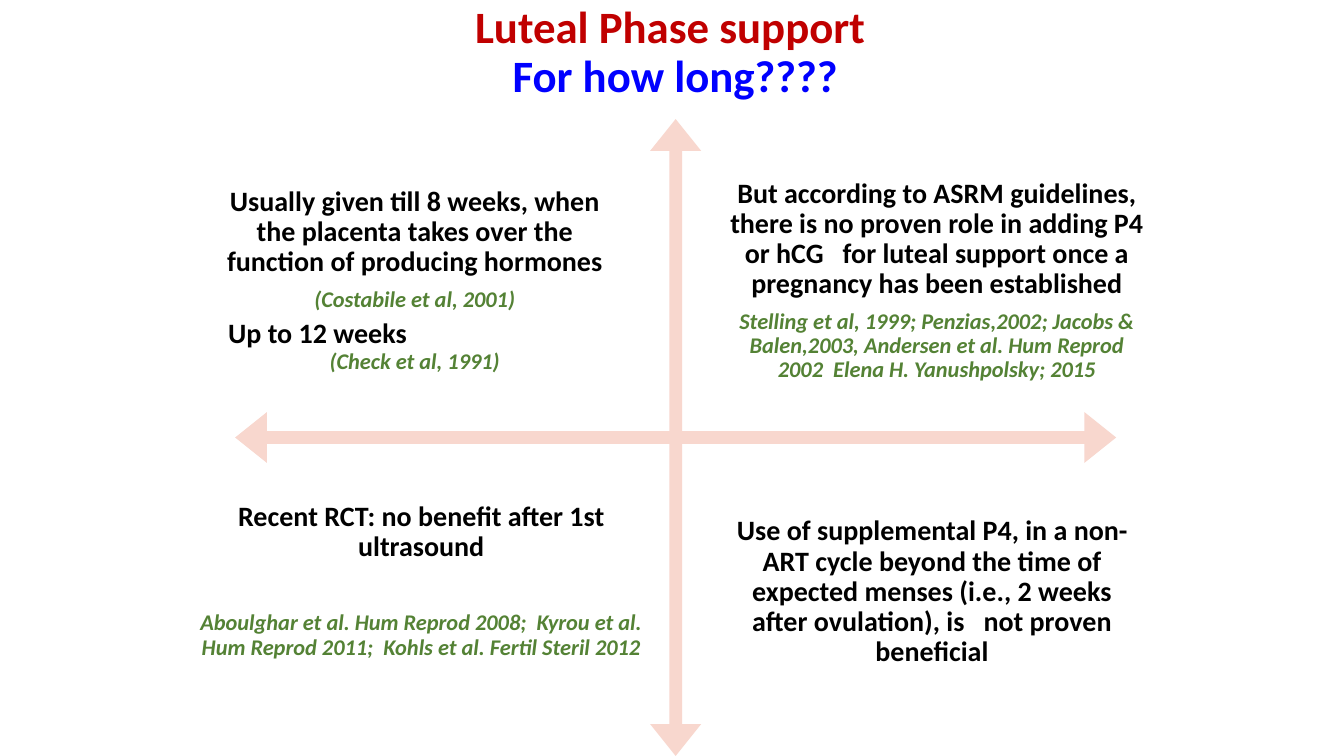
from dataclasses import dataclass
from pptx import Presentation
from pptx.dml.color import RGBColor
from pptx.enum.shapes import MSO_SHAPE as Shape
from pptx.enum.text import MSO_ANCHOR as Anchor, MSO_AUTO_SIZE as AutoSize, PP_ALIGN as Align
from pptx.util import Inches, Pt

RED = RGBColor(0xC0, 0x00, 0x00)
BLUE = RGBColor(0x00, 0x00, 0xFF)
PEACH = RGBColor(0xF8, 0xD7, 0xCE)
WHITE = RGBColor(0xFF, 0xFF, 0xFF)
BLACK = RGBColor(0x00, 0x00, 0x00)
GREEN = RGBColor(0x54, 0x82, 0x35)


@dataclass
class Line:
    text: str
    cite: bool = False
    left: bool = False
    before: float = 0
    after: float = 0


@dataclass
class Deck:
    prs: object
    s: object
    font: str = "Calibri"

    def box(self, x, y, w, h):
        width, height = self.prs.slide_width, self.prs.slide_height
        return (int(width * x / 100), int(height * y / 100),
                int(width * w / 100), int(height * h / 100))

    def style(self, p, size):
        p.alignment = Align.CENTER
        p.line_spacing = 0.9
        p.font.name = self.font
        p.font.size = Pt(size)
        p.font.bold = True

    def title(self, area, parts):
        sp = self.s.shapes.title
        sp.left, sp.top, sp.width, sp.height = self.box(*area)
        tf = sp.text_frame
        tf.auto_size = AutoSize.NONE
        tf.vertical_anchor = Anchor.TOP
        p = tf.paragraphs[0]
        self.style(p, 32)
        for i, (text, color) in enumerate(parts):
            if i:
                p.add_line_break()
            r = p.add_run()
            r.text = text
            r.font.color.rgb = color

    def shape(self, kind, area, fill):
        sp = self.s.shapes.add_shape(kind, *self.box(*area))
        sp.shadow.inherit = False
        sp.fill.solid()
        sp.fill.fore_color.rgb = fill
        sp.line.fill.background()
        return sp

    def arrows(self, area, adjustments):
        sp = self.shape(Shape.QUAD_ARROW, area, PEACH)
        for i, value in enumerate(adjustments):
            sp.adjustments[i] = value

    def card(self, area, lines, lift=0):
        tf = self.shape(Shape.ROUNDED_RECTANGLE, area, WHITE).text_frame
        tf.word_wrap = True
        tf.vertical_anchor = Anchor.MIDDLE
        tf.margin_left = tf.margin_right = tf.margin_top = Inches(0.08)
        tf.margin_bottom = Inches(0.08 + lift)
        for i, line in enumerate(lines):
            p = tf.add_paragraph() if i else tf.paragraphs[0]
            p.text = line.text
            self.style(p, 16 if line.cite else 20)
            p.font.italic = line.cite
            p.font.color.rgb = GREEN if line.cite else BLACK
            p.space_after = Pt(line.after)
            if line.before:
                p.space_before = Pt(line.before)
            if line.left:
                p.alignment = Align.LEFT
                p._p.get_or_add_pPr().set("marL", str(Inches(0.18)))


def main():
    prs = Presentation()
    prs.slide_width, prs.slide_height = Inches(13.33), Inches(7.5)
    deck = Deck(prs, prs.slides.add_slide(prs.slide_layouts[5]))
    deck.title((16.5, 0, 67.5, 16.67),
               [("Luteal Phase support ", RED), ("For how long????", BLUE)])
    deck.arrows((17.5, 15.75, 65.55, 84.25), (0.02, 0.04, 0.05))
    deck.card((14.1, 20.27, 33.53, 33.73), [
        Line("Usually given till 8 weeks, when the placenta takes over the "
             "function of producing hormones", after=7),
        Line("(Costabile et al, 2001)", cite=True, after=5.6),
        Line("Up to 12 weeks", left=True),
        Line("(Check et al, 1991)", cite=True)])
    deck.card((52.8, 20.27, 33.83, 33.73), [
        Line("But according to ASRM guidelines, there is no proven role in adding "
             "P4 or hCG   for luteal support once a pregnancy has been established", after=7),
        Line("Stelling et al, 1999; Penzias,2002; Jacobs & Balen,2003, Andersen et al. "
             "Hum Reprod 2002  Elena H. Yanushpolsky; 2015", cite=True)])
    deck.card((13.05, 61.73, 36.6, 33.73), [
        Line("Recent RCT: no benefit after 1st ultrasound", after=7),
        Line("Aboulghar et al. Hum Reprod 2008;  Kyrou et al. Hum Reprod 2011;  "
             "Kohls et al. Fertil Steril 2012", cite=True, before=28)], lift=0.26)
    deck.card((52.58, 61.47, 33.53, 33.73), [
        Line("Use of supplemental P4, in a non-ART cycle beyond the time of expected menses "
             "(i.e., 2 weeks after ovulation), is   not proven beneficial")])
    prs.save("out.pptx")


if __name__ == "__main__":
    main()
